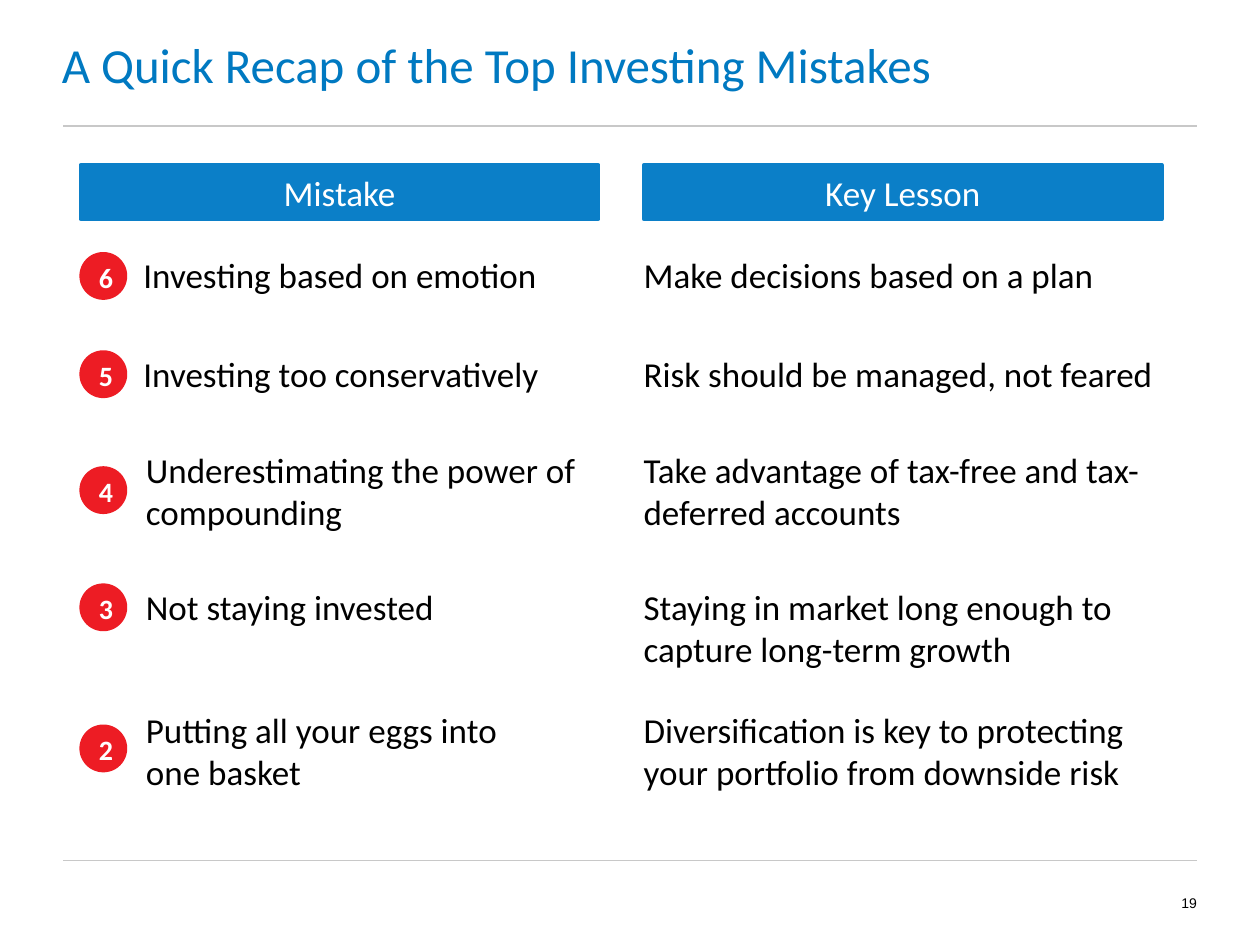
from pptx import Presentation
from pptx.dml.color import RGBColor
from pptx.enum import shapes, text
from pptx.oxml.ns import qn
from pptx.util import Inches, Pt
from lxml import etree

TITLE = "A Quick Recap of the Top Investing Mistakes"
PAGE_NUMBER = "19"
# heading, left edge
HEADINGS = [("Mistake", 0.64), ("Key Lesson", 5.11)]
# number, mistake, key lesson, text top, badge top, mistake left
ROWS = [
    ("6", "Investing based on emotion", "Make decisions based on a plan", 1.96, 2, 1.04),
    ("5", "Investing too conservatively", "Risk should be managed, not feared", 2.75, 2.78, 1.04),
    ("4", "Underestimating the power of compounding",
     "Take advantage of tax-free and tax-deferred accounts", 3.51, 3.7, 1.06),
    ("3", "Not staying invested",
     "Staying in market long enough to capture long-term growth", 4.6, 4.63, 1.06),
    ("2", "Putting all your eggs into\vone basket",
     "Diversification is key to protecting your portfolio from downside risk", 5.57, 5.75, 1.06),
]
LESSON_LEFT = 5.01
MISTAKE_WIDTH, LESSON_WIDTH = 3.87, 4.4
BADGE_LEFT, BADGE_SIZE = 0.63, 0.38
RULE_TOPS = (1, 6.83)

TITLE_BLUE = RGBColor(0x00, 0x79, 0xC1)
BAR_BLUE = RGBColor(0x0B, 0x7F, 0xC8)
RED = RGBColor(0xED, 0x1C, 0x24)
GREY = RGBColor(0xC8, 0xC8, 0xC8)
WHITE = RGBColor(0xFF, 0xFF, 0xFF)
BLACK = RGBColor(0, 0, 0)


def write(shape, words, size, color, align=text.PP_ALIGN.LEFT, anchor=text.MSO_ANCHOR.TOP,
          font="Calibri", bold=False, insets=(0.1, 0.05, 0.1, 0.05)):
    frame = shape.text_frame
    frame.text = words
    frame.word_wrap = True
    frame.auto_size = text.MSO_AUTO_SIZE.NONE
    frame.vertical_anchor = anchor
    (frame.margin_left, frame.margin_top,
     frame.margin_right, frame.margin_bottom) = map(Inches, insets)
    paragraph = frame.paragraphs[0]
    paragraph.alignment = align
    for run in paragraph.runs:
        run.font.name, run.font.size, run.font.bold = font, Pt(size), bold
        run.font.color.rgb = color


def add_text(slide, left, top, width, height, words, size, color, **style):
    box = slide.shapes.add_textbox(*map(Inches, (left, top, width, height)))
    write(box, words, size, color, **style)


def add_filled(slide, kind, left, top, width, height, color):
    shape = slide.shapes.add_shape(kind, *map(Inches, (left, top, width, height)))
    shape.shadow.inherit = False
    shape.fill.solid()
    shape.fill.fore_color.rgb = color
    shape.line.fill.background()
    return shape


def add_rule(slide, top):
    rule = slide.shapes.add_connector(shapes.MSO_CONNECTOR.STRAIGHT, Inches(0.5), Inches(top),
                                      Inches(9.5), Inches(top))
    rule.line.color.rgb = GREY
    rule.line.width = Pt(0.75)
    etree.SubElement(rule._element.spPr, qn("a:effectLst"))


def main():
    prs = Presentation()
    prs.slide_width, prs.slide_height = Inches(10), Inches(7.5)
    slide = prs.slides.add_slide(prs.slide_layouts[5])
    center, middle = text.PP_ALIGN.CENTER, text.MSO_ANCHOR.MIDDLE

    title = slide.shapes.title
    title.left, title.top, title.width, title.height = map(Inches, (0.49, 0.01, 9, 1))
    write(title, TITLE, 28, TITLE_BLUE, anchor=middle, insets=(0, 0, 0, 0))

    for top in RULE_TOPS:
        add_rule(slide, top)
    add_text(slide, 9, 6.83, 0.5, 0.67, PAGE_NUMBER, 8, BLACK, align=text.PP_ALIGN.RIGHT,
             anchor=middle, font="Arial", insets=(0, 0, 0, 0))

    for heading, left in HEADINGS:
        bar = add_filled(slide, shapes.MSO_SHAPE.RECTANGLE, left, 1.31, 4.11, 0.43, BAR_BLUE)
        bar.line.color.rgb = BAR_BLUE
        bar.line.width = Pt(2.25)
        write(bar, heading, 20, WHITE, align=center)

    for number, mistake, lesson, top, badge_top, mistake_left in ROWS:
        badge = add_filled(slide, shapes.MSO_SHAPE.OVAL, BADGE_LEFT, badge_top,
                           BADGE_SIZE, BADGE_SIZE, RED)
        write(badge, number, 16, WHITE, align=center, anchor=middle, bold=True,
              insets=(0.04, 0.02, 0, 0))
        height = 0.77 if len(lesson) > 40 else 0.43
        add_text(slide, mistake_left, top, MISTAKE_WIDTH, height, mistake, 20, BLACK)
        add_text(slide, LESSON_LEFT, top, LESSON_WIDTH, height, lesson, 20, BLACK)

    prs.save("out.pptx")


if __name__ == "__main__":
    main()
